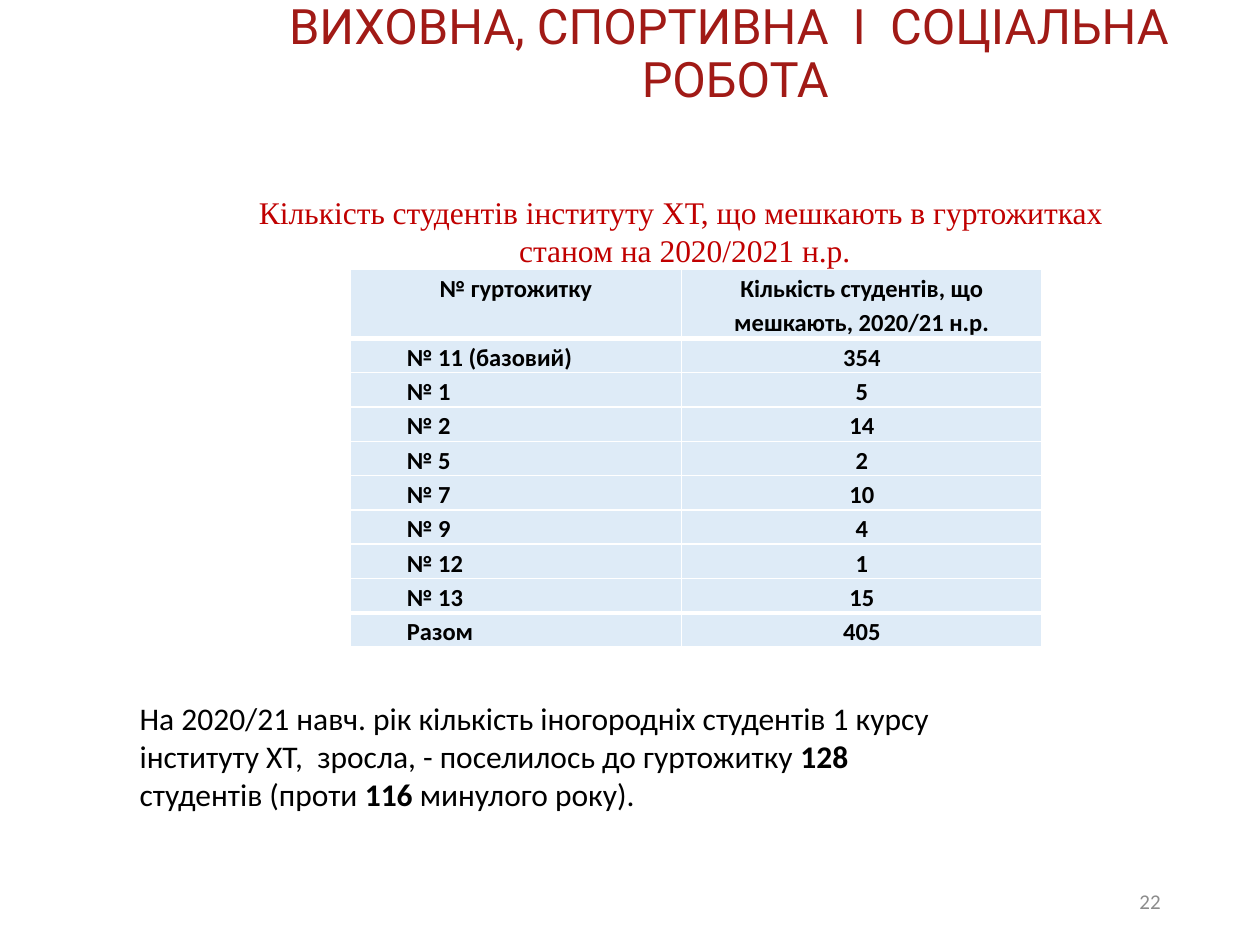
"""Build the slide on students living in dormitories."""
import pptx
import pptx.dml.color
import pptx.enum.text
import pptx.oxml
import pptx.oxml.ns
import pptx.util

Inches = pptx.util.Inches
Align = pptx.enum.text.PP_ALIGN
Anchor = pptx.enum.text.MSO_ANCHOR

THEME = {
    "title": {"name": "Roboto", "size": 27.9, "color": "A11A16"},
    "caption": {"name": "Times New Roman", "size": 18, "color": "C00000"},
    "body": {"name": "Calibri", "size": 18, "color": "000000"},
    "cell": {"name": "Calibri", "size": 14, "color": "000000", "bold": True},
    "number": {"name": "Calibri", "size": 12, "color": "8C8C8C"},
    "cell_fill": "DEEBF7",
    "border": "FFFFFF",
}

TEXTS = [
    {"style": "title", "at": (1.67, 0, 8.33, 1.12), "align": Align.CENTER,
     "anchor": Anchor.TOP, "inset": 0.02, "spacing": 0.9,
     "paras": [[("ВИХОВНА, СПОРТИВНА  І  СОЦІАЛЬНА  РОБОТА", False)]]},
    {"style": "caption", "at": (1.19, 1.45, 8.43, 1.01), "align": Align.CENTER,
     "anchor": Anchor.TOP, "inset": 0.08, "spacing": 1.0,
     "paras": [
         [("Кількість студентів інституту ХТ, що мешкають в гуртожитках", False)],
         [(" станом на 2020/2021 н.р.", False)],
     ]},
    {"style": "body", "at": (1.01, 5.5, 6.52, 1.31), "align": Align.LEFT,
     "anchor": Anchor.TOP, "inset": 0.05, "spacing": 1.0,
     "paras": [[
         ("На 2020/21 навч. рік кількість іногородніх студентів 1 курсу "
          "інституту ХТ,  зросла, - поселилось до гуртожитку ", False),
         ("128 ", True),
         ("студентів (проти ", False),
         ("116 ", True),
         ("минулого року).", False),
     ]]},
    {"style": "number", "at": (7.06, 6.95, 2.25, 0.4), "align": Align.RIGHT,
     "anchor": Anchor.MIDDLE, "inset": 0.05, "spacing": 1.0,
     "paras": [[("22", False)]]},
]

HEADER = ("№ гуртожитку", "Кількість студентів, що мешкають, 2020/21 н.р.")
DORMITORIES = [
    ("№ 11 (базовий)", 354),
    ("№ 1", 5),
    ("№ 2", 14),
    ("№ 5", 2),
    ("№ 7", 10),
    ("№ 9", 4),
    ("№ 12", 1),
    ("№ 13", 15),
    ("Разом", 405),
]
TABLE_LEFT, TABLE_TOP = 2.78, 2.14
COLUMN_WIDTHS = (2.63, 2.86)
HEADER_HEIGHT, ROW_HEIGHT = 0.54, 0.27


def assign(target, values):
    for name, value in values.items():
        setattr(target, name, value)


def add_span(para, text, style, **extra):
    span = para.add_run()
    span.text = text
    values = {**THEME[style], **extra}
    color = values.pop("color")
    values["size"] = pptx.util.Pt(values["size"])
    assign(span.font, values)
    span.font.color.rgb = pptx.dml.color.RGBColor.from_string(color)


def add_text(page, item):
    box = page.shapes.add_textbox(*map(Inches, item["at"]))
    frame = box.text_frame
    assign(frame, {"word_wrap": True, "vertical_anchor": item["anchor"],
                   "margin_top": Inches(item["inset"])})
    for index, spans in enumerate(item["paras"]):
        para = frame.add_paragraph() if index else frame.paragraphs[0]
        assign(para, {"alignment": item["align"], "line_spacing": item["spacing"]})
        for text, bold in spans:
            add_span(para, text, item["style"], bold=bold)


def set_borders(cell, top, bottom):
    properties = cell._tc.get_or_add_tcPr()
    sides = {"lnL": 1, "lnR": 1, "lnT": top, "lnB": bottom}
    for index, (side, points) in enumerate(sides.items()):
        properties.insert(index, pptx.oxml.parse_xml(
            f'<a:{side} {pptx.oxml.ns.nsdecls("a")} w="{pptx.util.Pt(points)}">'
            f'<a:solidFill><a:srgbClr val="{THEME["border"]}"/></a:solidFill>'
            f'</a:{side}>'))


def fill_cell(cell, text, centered, top, bottom):
    assign(cell, {"margin_left": Inches(0.07), "margin_right": Inches(0.07),
                  "margin_top": 0, "margin_bottom": 0})
    cell.fill.solid()
    cell.fill.fore_color.rgb = pptx.dml.color.RGBColor.from_string(THEME["cell_fill"])
    set_borders(cell, top, bottom)
    para = cell.text_frame.paragraphs[0]
    assign(para, {"alignment": Align.CENTER if centered else Align.LEFT,
                  "line_spacing": 1.15})
    if not centered:
        para._p.get_or_add_pPr().set("marL", str(Inches(0.38)))
    add_span(para, str(text), "cell")


def add_dormitory_table(page):
    rows = [HEADER, *DORMITORIES]
    heights = [HEADER_HEIGHT] + [ROW_HEIGHT] * len(DORMITORIES)
    last = len(rows) - 1
    table = page.shapes.add_table(
        len(rows), len(HEADER), Inches(TABLE_LEFT), Inches(TABLE_TOP),
        Inches(sum(COLUMN_WIDTHS)), Inches(sum(heights))).table
    for column, width in zip(table.columns, COLUMN_WIDTHS):
        column.width = Inches(width)
    for r, (values, height) in enumerate(zip(rows, heights)):
        table.rows[r].height = Inches(height)
        top = 3 if r in (1, last) else 1
        bottom = 3 if r in (0, last - 1) else 1
        for c, value in enumerate(values):
            fill_cell(table.cell(r, c), value, r == 0 or c == 1, top, bottom)


def main():
    deck = pptx.Presentation()
    assign(deck, {"slide_width": Inches(10), "slide_height": Inches(7.5)})
    page = deck.slides.add_slide(deck.slide_layouts[6])
    add_dormitory_table(page)
    for item in TEXTS:
        add_text(page, item)
    deck.save("out.pptx")


if __name__ == "__main__":
    main()
